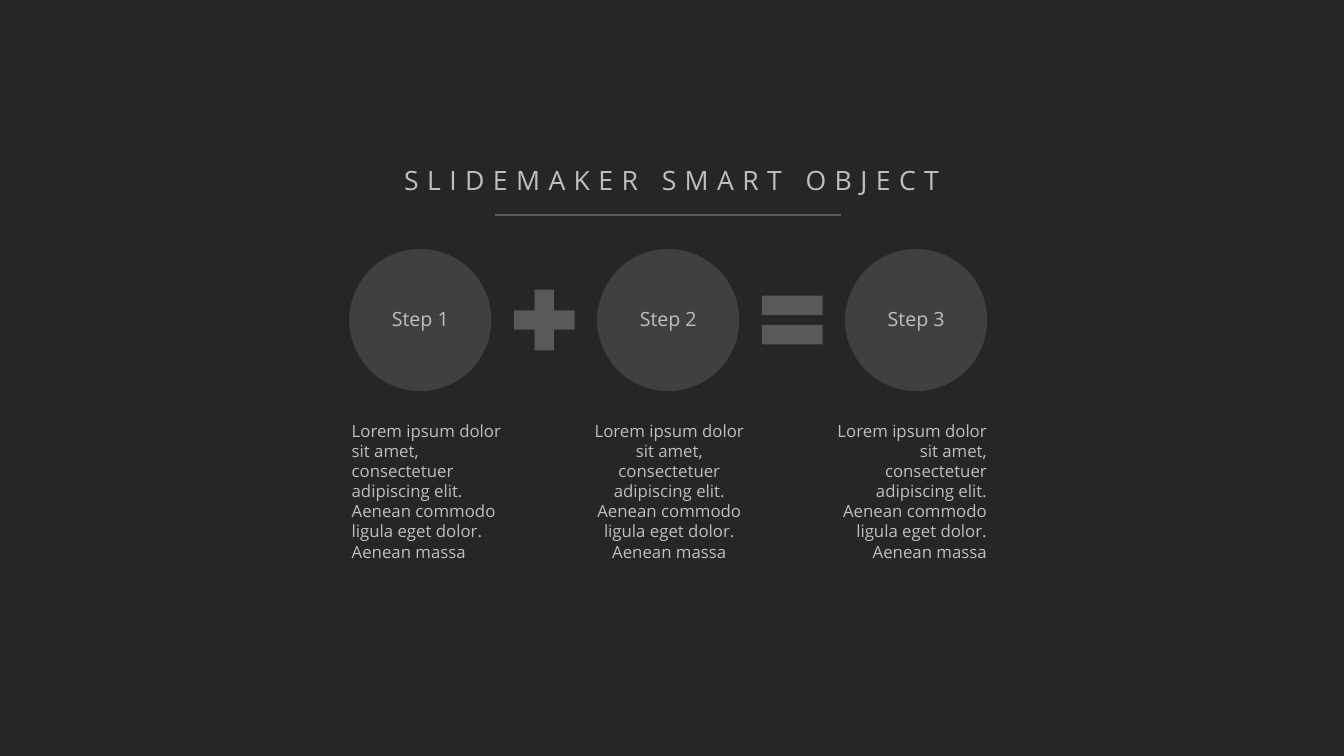
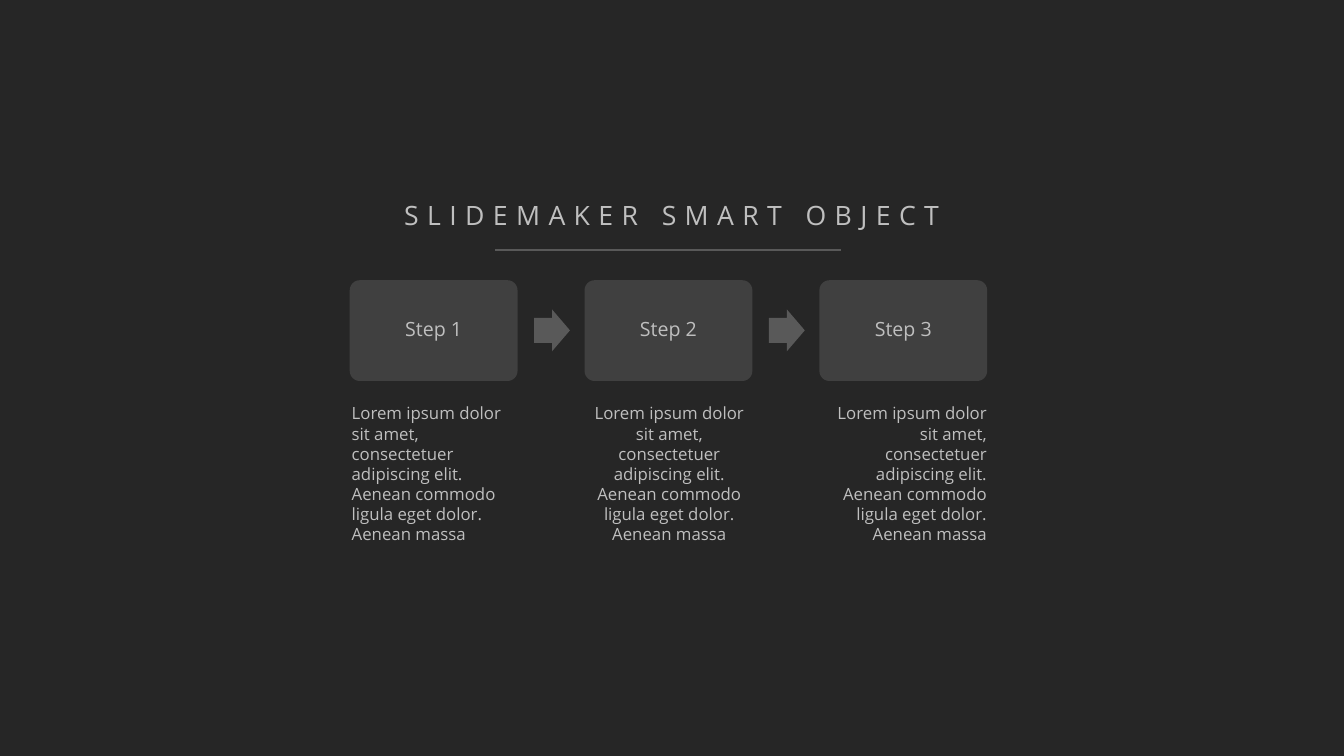
from lxml.etree import SubElement
from pptx import Presentation
from pptx.dml.color import RGBColor
from pptx.enum.shapes import MSO_CONNECTOR, MSO_SHAPE
from pptx.enum.text import MSO_ANCHOR, MSO_AUTO_SIZE, PP_ALIGN
from pptx.oxml.ns import qn
from pptx.util import Pt

EMU_PER_PX = 9144
FONT = "Open Sans"
BACKGROUND, PANEL, ACCENT, TEXT = "262626", "404040", "595959", "BFBFBF"
TITLE = "SLIDEMAKER SMART OBJECT"
BODY = ("Lorem ipsum dolor sit amet, consectetuer adipiscing elit. "
        "Aenean commodo ligula eget dolor. Aenean massa")
STEPS = ("Step 1", "Step 2", "Step 3")
ALIGNMENTS = (PP_ALIGN.LEFT, PP_ALIGN.CENTER, PP_ALIGN.RIGHT)


def px(length):
    """Turn px, a hundred to the inch, into EMU."""
    return length * EMU_PER_PX


def place(left, top, width, height):
    """Return a box in EMU."""
    return px(left), px(top), px(width), px(height)


def color(value):
    """Turn a hex string into a colour."""
    return RGBColor.from_string(value)


def write(shape, text, size, align):
    """Write one formatted paragraph into a shape and return its run."""
    frame = shape.text_frame
    frame.text = text
    para = frame.paragraphs[0]
    para.alignment = align
    span = para.runs[0]
    span.font.name = FONT
    span.font.size = Pt(size)
    span.font.color.rgb = color(TEXT)
    return span


def add_filled(shapes, kind, box, fill, adjustments=()):
    """Add a flat preset shape without an outline."""
    shape = shapes.add_shape(kind, *place(*box))
    shape.shadow.inherit = False
    shape.fill.solid()
    shape.fill.fore_color.rgb = color(fill)
    shape.line.fill.background()
    for index, value in enumerate(adjustments):
        shape.adjustments[index] = value
    return shape


def add_heading(page, left, top):
    """Place the spaced title and the rule below it."""
    title = page.shapes.title
    title.left, title.top, title.width, title.height = place(left, top, 1134, 74)
    span = write(title, TITLE, 38, PP_ALIGN.CENTER)
    span.font._element.set("spc", "1200")
    frame = title.text_frame
    frame.vertical_anchor = MSO_ANCHOR.TOP
    frame.word_wrap = False
    frame.auto_size = MSO_AUTO_SIZE.SHAPE_TO_FIT_TEXT

    rule_left, rule_top = px(left + 217), px(top + 106)
    rule = page.shapes.add_connector(
        MSO_CONNECTOR.STRAIGHT, rule_left, rule_top, rule_left + px(686), rule_top)
    rule.line.color.rgb = color(ACCENT)
    rule.line.width = Pt(3)
    SubElement(rule._element.spPr, qn("a:effectLst"))


def add_steps(page, box, pitch, step_kind, step_adjustments=()):
    """Place the labelled steps in one group, starting from the first box."""
    left, top, width, height = box
    group = page.shapes.add_group_shape()
    for index, label in enumerate(STEPS):
        step_box = (left + index * pitch, top, width, height)
        step = add_filled(group.shapes, step_kind, step_box, PANEL, step_adjustments)
        write(step, label, 28, PP_ALIGN.CENTER)
        step.text_frame.paragraphs[0].line_spacing = 0.9
        step.text_frame.vertical_anchor = MSO_ANCHOR.MIDDLE
    return group


def add_operators(group, box, pitch, size, gap, kinds, adjustments=()):
    """Place an operator after each step but the last, centred on its height."""
    left, top, step_width, step_height = box
    width, height = size
    for index, kind in enumerate(kinds):
        operator_box = (left + index * pitch + step_width + gap,
                        top + (step_height - height) // 2, width, height)
        add_filled(group.shapes, kind, operator_box, ACCENT, adjustments)


def add_descriptions(page, left, top):
    """Place the three description columns."""
    for index, align in enumerate(ALIGNMENTS):
        column = page.shapes.add_textbox(*place(left + index * 466, top, 348, 293))
        column.text_frame.word_wrap = True
        column.text_frame.auto_size = MSO_AUTO_SIZE.SHAPE_TO_FIT_TEXT
        write(column, BODY, 24, align)


def add_equation_page(deck):
    """Build the page where two circles add up to a third."""
    page = deck.slides.add_slide(deck.slide_layouts[5])
    add_heading(page, 766, 320)
    box, pitch = (693, 494, 282, 282), 492
    group = add_steps(page, box, pitch, MSO_SHAPE.OVAL)
    signs = (MSO_SHAPE.MATH_PLUS, MSO_SHAPE.MATH_EQUAL)
    add_operators(group, box, pitch, (164, 164), 23, signs)
    add_descriptions(page, 688, 829)


def add_process_page(deck):
    """Build the page where arrows lead through three panels."""
    page = deck.slides.add_slide(deck.slide_layouts[5])
    add_heading(page, 766, 390)
    box, pitch = (694, 556, 333, 200), 466
    group = add_steps(page, box, pitch, MSO_SHAPE.ROUNDED_RECTANGLE, (0.1,))
    arrows = (MSO_SHAPE.RIGHT_ARROW,) * 2
    add_operators(group, box, pitch, (71, 83), 33, arrows, (0.6, 0.5))
    add_descriptions(page, 688, 795)


def main():
    """Build and save the deck."""
    deck = Presentation()
    deck.slide_width, deck.slide_height = px(2667), px(1500)
    background = deck.slide_master.background.fill
    background.solid()
    background.fore_color.rgb = color(BACKGROUND)
    add_equation_page(deck)
    add_process_page(deck)
    deck.save("out.pptx")


if __name__ == "__main__":
    main()
